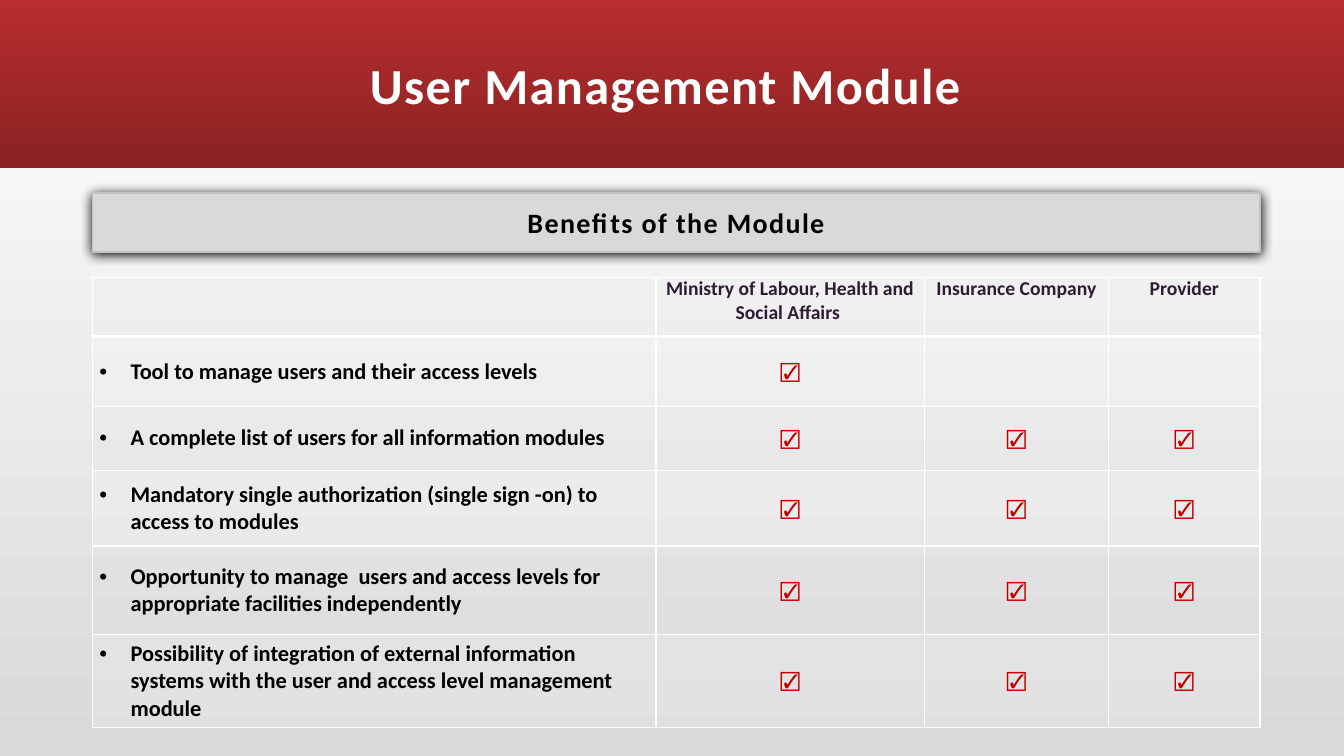
from collections import namedtuple
from dataclasses import dataclass

from lxml import etree
from pptx import Presentation
from pptx.dml.color import RGBColor
from pptx.enum import shapes, text
from pptx.oxml.ns import qn
from pptx.util import Inches, Pt

Box = namedtuple("Box", "left top width height")
UNIT = Inches(40 / 3) // 16


@dataclass(frozen=True)
class Theme:
    """Colours, fonts and type sizes of the slide."""
    white: str = "FFFFFF"
    black: str = "000000"
    grey: str = "D9D9D9"
    outline: str = "C1C0C3"
    red: str = "B82D2F"
    dark_red: str = "8A2223"
    check: str = "C00000"
    heading: str = "2D1D32"
    body_font: str = "Calibri"
    check_font: str = "Arial"
    title_size: int = 36
    banner_size: int = 20
    body_size: int = 16
    small_size: int = 14


THEME = Theme()
CHECK = "☑"
COLUMNS = (5.59, 2.66, 1.83, 1.5)
ROWS = (0.59, 0.69, 0.64, 0.75, 0.88, 0.92)
HEADINGS = ("", "Ministry of Labour, Health and Social Affairs ", "Insurance Company", "Provider")
BENEFITS = (
    ("Tool to manage users and their access levels", 1),
    ("A complete list of users for all information modules", 3),
    ("Mandatory single authorization (single sign -on) to access to modules", 3),
    ("Opportunity to manage  users and access levels for appropriate facilities independently", 3),
    ("Possibility of integration of external information systems with the user and access level "
     "management module", 3),
)


def grid(left, top, width, height):
    """Return a box measured in sixteenths of the slide's width."""
    return Box(*(round(length * UNIT) for length in (left, top, width, height)))


def colour(value):
    """Return a hex string as a colour."""
    return RGBColor.from_string(value)


def add_child(parent, tag, **attributes):
    """Append a drawing element and return it."""
    child = etree.SubElement(parent, qn(tag))
    for name, value in attributes.items():
        child.set(name, str(value))
    return child


def fill_gradient(fill, angle, *colours):
    """Fill with a two-colour linear gradient."""
    fill.gradient()
    fill.gradient_angle = angle
    for stop, value in zip(fill.gradient_stops, colours):
        stop.color.rgb = colour(value)


def write(frame, words, size, value, font=THEME.body_font, align=text.PP_ALIGN.CENTER, spacing=0):
    """Write one bold paragraph and return it."""
    frame.text = words
    frame.word_wrap = True
    paragraph = frame.paragraphs[0]
    paragraph.alignment = align
    paragraph.font.size = Pt(size)
    paragraph.font.name = font
    paragraph.font.bold = True
    paragraph.font.color.rgb = colour(value)
    if spacing:
        paragraph.font._element.set("spc", str(spacing * 100))
    return paragraph


def add_title(slide, band_box, title_box):
    """Place the title on its red band."""
    band = slide.shapes.add_shape(shapes.MSO_SHAPE.RECTANGLE, *band_box)
    band.shadow.inherit = False
    band.line.fill.background()
    fill_gradient(band.fill, 270, THEME.red, THEME.dark_red)
    title = slide.shapes.title
    title.element.addprevious(band.element)
    title.left, title.top, title.width, title.height = title_box
    title.text_frame.vertical_anchor = text.MSO_ANCHOR.MIDDLE
    write(title.text_frame, "User Management Module ", THEME.title_size, THEME.white, spacing=1)


def add_banner(slide, box):
    """Place the shadowed subtitle bar."""
    banner = slide.shapes.add_shape(shapes.MSO_SHAPE.RECTANGLE, *box)
    banner.fill.solid()
    banner.fill.fore_color.rgb = colour(THEME.grey)
    banner.line.color.rgb = colour(THEME.outline)
    banner.line.width = Pt(1)
    banner.shadow.inherit = False
    effects = banner.element.spPr.find(qn("a:effectLst"))
    shadow = add_child(effects, "a:outerShdw", blurRad=Pt(8.5), dist=Pt(1), dir=5400000,
                       algn="ctr", rotWithShape=0)
    add_child(shadow, "a:srgbClr", val=THEME.black)
    banner.text_frame.vertical_anchor = text.MSO_ANCHOR.MIDDLE
    write(banner.text_frame, "Benefits of the Module", THEME.banner_size, THEME.black, spacing=1)


def format_cell(cell, row):
    """Set a cell's insets, borders and fill by its row."""
    cell.margin_left = cell.margin_right = Inches(0.07)
    cell.margin_top = cell.margin_bottom = 0
    cell.vertical_anchor = text.MSO_ANCHOR.MIDDLE if row else text.MSO_ANCHOR.TOP
    properties = cell._tc.get_or_add_tcPr()
    widths = {"L": 1, "R": 1, "T": 2 if row == 1 else 1, "B": 1 if row else 2}
    for side, width in widths.items():
        line = add_child(properties, f"a:ln{side}", w=Pt(width))
        add_child(add_child(line, "a:solidFill"), "a:srgbClr", val=THEME.white)
    if row % 2:
        cell.fill.solid()
        cell.fill.fore_color.rgb = colour(THEME.white)
        add_child(properties.find(qn("a:solidFill"))[0], "a:alpha", val=20000)
    else:
        cell.fill.background()


def write_benefit(cell, words):
    """Write a bulleted benefit with a hanging indent."""
    paragraph = write(cell.text_frame, words, THEME.body_size, THEME.black,
                      align=text.PP_ALIGN.LEFT)
    paragraph.space_before = Pt(12)
    properties = paragraph._p.get_or_add_pPr()
    properties.set("marL", str(Inches(0.31)))
    properties.set("indent", str(-Inches(0.31)))
    defaults = properties.find(qn("a:defRPr"))
    defaults.addprevious(add_child(properties, "a:buFont", typeface=THEME.check_font))
    defaults.addprevious(add_child(properties, "a:buChar", char="•"))


def add_benefits(slide, box):
    """Place the table of benefits by organisation."""
    table = slide.shapes.add_table(len(ROWS), len(COLUMNS), *box).table
    table.first_row = table.horz_banding = False
    for column, share in zip(table.columns, COLUMNS):
        column.width = round(box.width * share / sum(COLUMNS))
    for row, share in zip(table.rows, ROWS):
        row.height = round(box.height * share / sum(ROWS))
    for row in range(len(ROWS)):
        for column in range(len(COLUMNS)):
            format_cell(table.cell(row, column), row)
    for column, heading in enumerate(HEADINGS):
        if heading:
            write(table.cell(0, column).text_frame, heading, THEME.small_size, THEME.heading)
    for row, (benefit, checks) in enumerate(BENEFITS, 1):
        write_benefit(table.cell(row, 0), benefit)
        for column in range(1, checks + 1):
            write(table.cell(row, column).text_frame, CHECK, THEME.small_size, THEME.check,
                  font=THEME.check_font, spacing=1)


def main():
    """Build and save the presentation."""
    presentation = Presentation()
    presentation.slide_width, presentation.slide_height = 16 * UNIT, 9 * UNIT
    slide = presentation.slides.add_slide(presentation.slide_layouts[5])
    fill_gradient(slide.background.fill, 90, THEME.grey, THEME.white)
    add_title(slide, grid(0, 0, 16, 2), grid(1.4, 0, 13.2, 2))
    add_banner(slide, grid(1.1, 2.3, 13.9, 0.7))
    add_benefits(slide, grid(1.1, 3.3, 13.9, 5.36))
    presentation.save("out.pptx")


if __name__ == "__main__":
    main()
